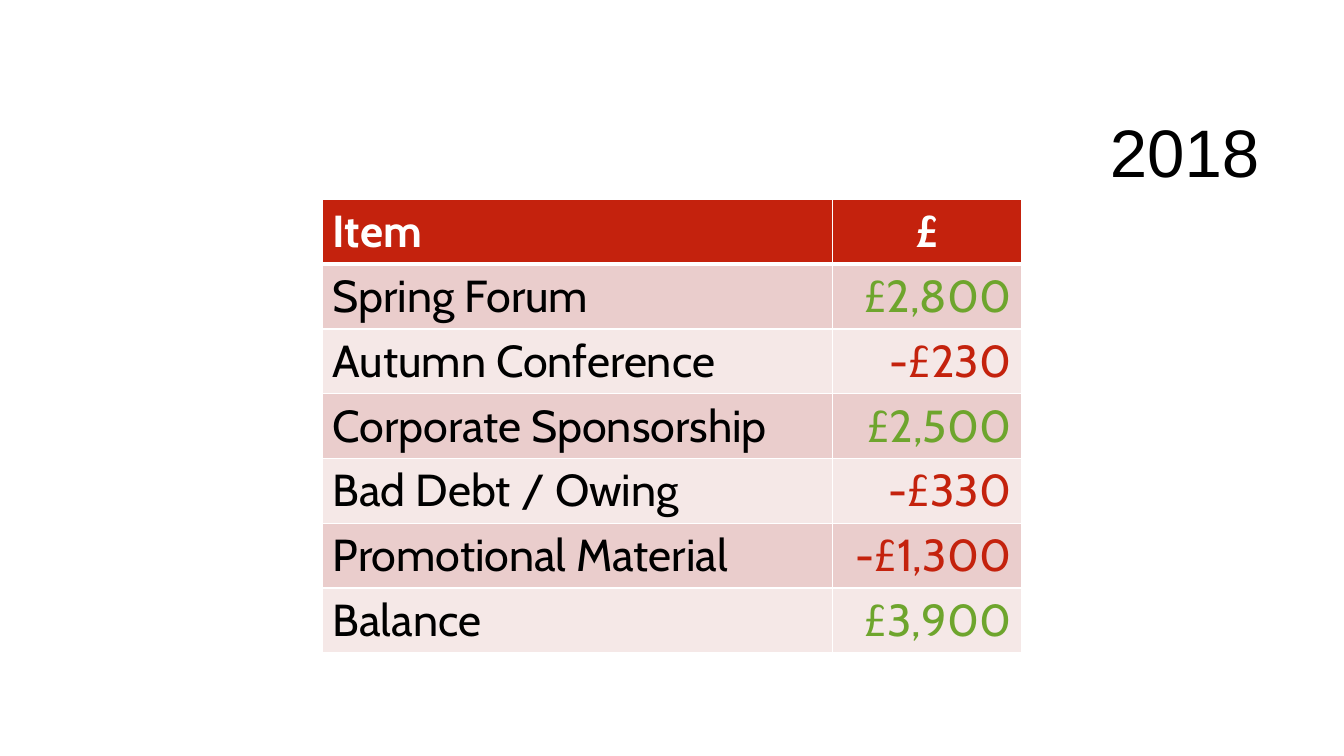
from dataclasses import dataclass

from lxml.etree import SubElement
from pptx import Presentation
from pptx.dml.color import RGBColor
from pptx.enum.text import MSO_ANCHOR, PP_ALIGN
from pptx.oxml.ns import qn
from pptx.util import Inches, Pt


@dataclass(frozen=True)
class Theme:
    title_font: str = "Arial"
    table_font: str = "Cabin"
    title_size: int = 48
    table_size: int = 32
    white: str = "FFFFFF"
    black: str = "000000"
    red: str = "C4220D"
    green: str = "6EA52D"
    bands: tuple = ("EACDCC", "F5E8E7")
    thin_rule: int = 1
    header_rule: int = 3


THEME = Theme()
HEADINGS = ("Item", "£")
ACCOUNTS = (
    ("Spring Forum", "£2,800"),
    ("Autumn Conference", "-£230"),
    ("Corporate Sponsorship", "£2,500"),
    ("Bad Debt / Owing", "-£330"),
    ("Promotional Material", "-£1,300"),
    ("Balance", "£3,900"),
)
AMOUNT_SHARE = 0.27


def format_text(paragraph, color, alignment, **font_values):
    paragraph.alignment = alignment
    for attribute, value in font_values.items():
        setattr(paragraph.font, attribute, value)
    paragraph.font.color.rgb = RGBColor.from_string(color)


def set_borders(cell, top, bottom):
    """Draw white rules round a cell; top and bottom are widths in points."""
    properties = cell._tc.get_or_add_tcPr()
    widths = {"L": THEME.thin_rule, "R": THEME.thin_rule, "T": top, "B": bottom}
    for position, (side, width) in enumerate(widths.items()):
        rule = SubElement(properties, qn(f"a:ln{side}"), w=str(Pt(width)))
        color = SubElement(SubElement(rule, qn("a:solidFill")), qn("a:srgbClr"))
        color.set("val", THEME.white)
        properties.insert(position, rule)


def add_year(slide, left, top, width, height, year):
    title = slide.shapes.title
    box = {"left": left, "top": top, "width": width, "height": height}
    for attribute, value in box.items():
        setattr(title, attribute, Inches(value))
    title.text_frame.text = year
    title.text_frame.vertical_anchor = MSO_ANCHOR.MIDDLE
    heading = title.text_frame.paragraphs[0]
    heading.line_spacing = 0.9
    format_text(heading, THEME.black, PP_ALIGN.RIGHT,
                name=THEME.title_font, size=Pt(THEME.title_size))


def fill_cell(cell, text, fill, color, alignment, bold):
    cell.text = text
    cell.fill.solid()
    cell.fill.fore_color.rgb = RGBColor.from_string(fill)
    format_text(cell.text_frame.paragraphs[0], color, alignment, bold=bold,
                name=THEME.table_font, size=Pt(THEME.table_size))


def add_accounts(slide, left, top, width, height):
    rows = (HEADINGS, *ACCOUNTS)
    accounts = slide.shapes.add_table(
        len(rows), len(HEADINGS),
        Inches(left), Inches(top), Inches(width), Inches(height)).table
    for column, share in zip(accounts.columns, (1 - AMOUNT_SHARE, AMOUNT_SHARE)):
        column.width = Inches(width * share)

    for row, (item, amount) in enumerate(rows):
        item_cell, amount_cell = accounts.cell(row, 0), accounts.cell(row, 1)
        is_header = row == 0
        if is_header:
            fill, item_color, amount_color = THEME.red, THEME.white, THEME.white
            amount_alignment = PP_ALIGN.CENTER
        else:
            fill, item_color = THEME.bands[(row - 1) % 2], THEME.black
            amount_color = THEME.red if amount.startswith("-") else THEME.green
            amount_alignment = PP_ALIGN.RIGHT
        fill_cell(item_cell, item, fill, item_color, PP_ALIGN.LEFT, is_header)
        fill_cell(amount_cell, amount, fill, amount_color, amount_alignment, is_header)
        for cell in (item_cell, amount_cell):
            set_borders(cell,
                        top=THEME.header_rule if row == 1 else THEME.thin_rule,
                        bottom=THEME.header_rule if is_header else THEME.thin_rule)


def main():
    presentation = Presentation()
    presentation.slide_width = Inches(13.33)
    presentation.slide_height = Inches(7.5)
    title_only = presentation.slide_layouts.get_by_name("Title Only")
    slide = presentation.slides.add_slide(title_only)
    add_year(slide, 3.17, 0.84, 9.42, 1.41, "2018")
    add_accounts(slide, 3.2, 1.98, 6.93, 4.43)
    presentation.save("out.pptx")


if __name__ == "__main__":
    main()
